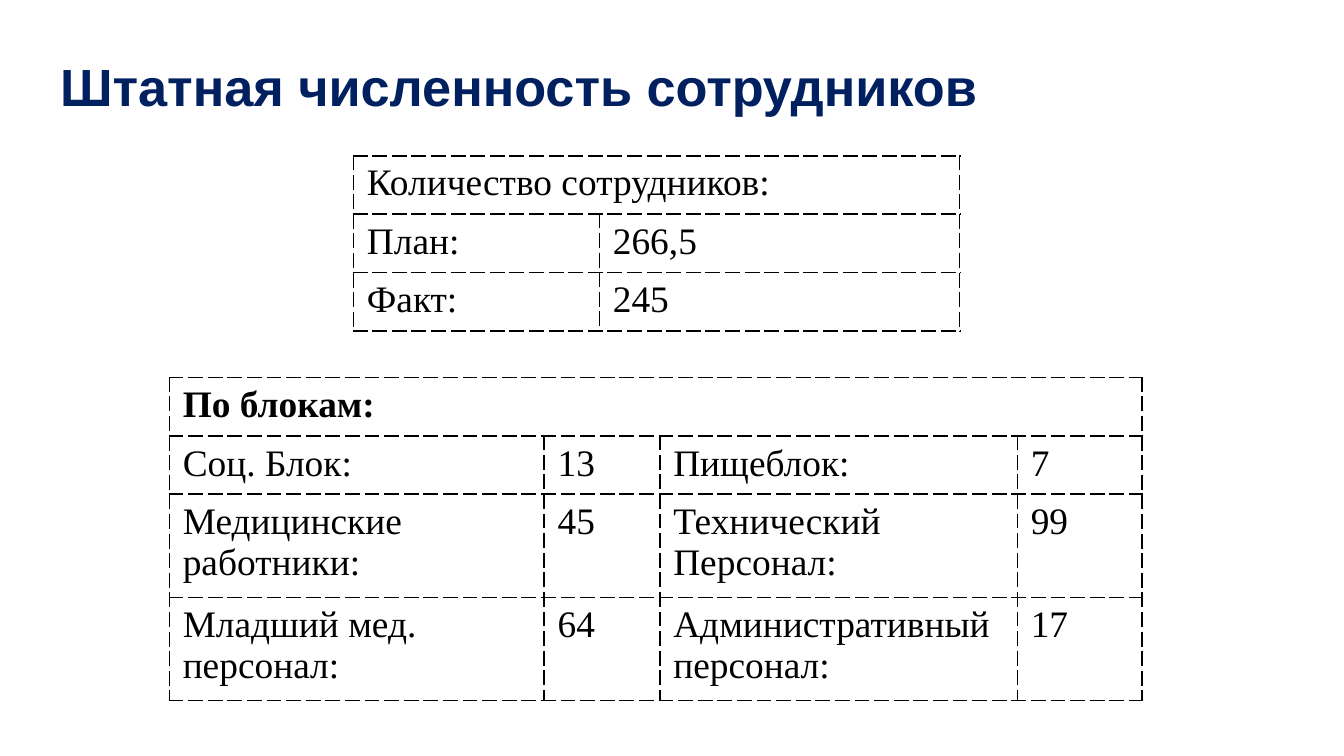
from pptx import Presentation
from pptx.util import Inches, Pt
from pptx.dml.color import RGBColor as Rgb
from pptx.enum.text import MSO_ANCHOR as Anchor
from pptx.oxml import parse_xml
from pptx.oxml.ns import nsdecls

NAVY, BLACK = "002060", "000000"
TITLE = dict(name="Arial", size=Pt(28), bold=True)
BODY = dict(name="Times New Roman", size=Pt(20), bold=False)
HEAD = {**BODY, "bold": True}

STAFF = [["Количество сотрудников:"],
         ["План:", "266,5"],
         ["Факт:", "245"]]
BLOCKS = [["По блокам:"],
          ["Соц. Блок:", "13", "Пищеблок:", "7"],
          ["Медицинские работники:", "45", "Технический Персонал:", "99"],
          ["Младший мед. персонал:", "64", "Административный персонал:", "17"]]


def color(code):
    return Rgb.from_string(code)


def write(frame, text, style, code):
    para = frame.paragraphs[0]
    run = para.add_run()
    run.text = text
    for key, value in style.items():
        setattr(run.font, key, value)
    run.font.color.rgb = color(code)
    return para


def add_title(slide, text):
    box = slide.shapes.add_textbox(Inches(0.35), Inches(0.26), Inches(9.06), Inches(0.66))
    frame = box.text_frame
    frame.word_wrap = True
    frame.vertical_anchor = Anchor.MIDDLE
    write(frame, text, TITLE, NAVY).line_spacing = 1.2


def add_border(cell):
    props = cell._tc.get_or_add_tcPr()
    for side in ("lnL", "lnR", "lnT", "lnB"):
        props.append(parse_xml(
            f'<a:{side} {nsdecls("a")} w="{Pt(1)}"><a:solidFill><a:srgbClr val="{BLACK}"/>'
            f'</a:solidFill><a:prstDash val="lgDash"/></a:{side}>'))


def add_grid(slide, left, top, high, cols, rows, data, head):
    shape = slide.shapes.add_table(len(rows), len(cols), Inches(left), Inches(top),
                                   Inches(sum(cols)), Inches(high))
    table = shape.table
    table.first_row = table.horz_banding = False
    for col, width in zip(table.columns, cols):
        col.width = Inches(width)
    # Rows are minimum heights and grow with their text
    for row, height in zip(table.rows, rows):
        row.height = Inches(height)
    shape.height = Inches(high)
    # Borders come before the fill in the cell properties
    for cell in table.iter_cells():
        add_border(cell)
        cell.fill.background()
    # The heading spans the full width
    table.cell(0, 0).merge(table.cell(0, len(cols) - 1))
    for r, line in enumerate(data):
        for c, text in enumerate(line):
            write(table.cell(r, c).text_frame, text, BODY if r else head, BLACK)


def main():
    deck = Presentation()
    deck.slide_width, deck.slide_height = Inches(10), Inches(10 * 9 / 16)
    slide = deck.slides.add_slide(deck.slide_layouts[6])
    add_title(slide, "Штатная численность сотрудников")
    # Totals
    add_grid(slide, 2.63, 1.16, 1.3, [1.83, 2.68], [0.22] * 3, STAFF, BODY)
    # Staff by block
    add_grid(slide, 1.26, 2.81, 2.4, [2.79, 0.86, 2.66, 0.93], [0.4, 0.4, 0.7, 0.7], BLOCKS, HEAD)
    deck.save("out.pptx")


if __name__ == "__main__":
    main()
